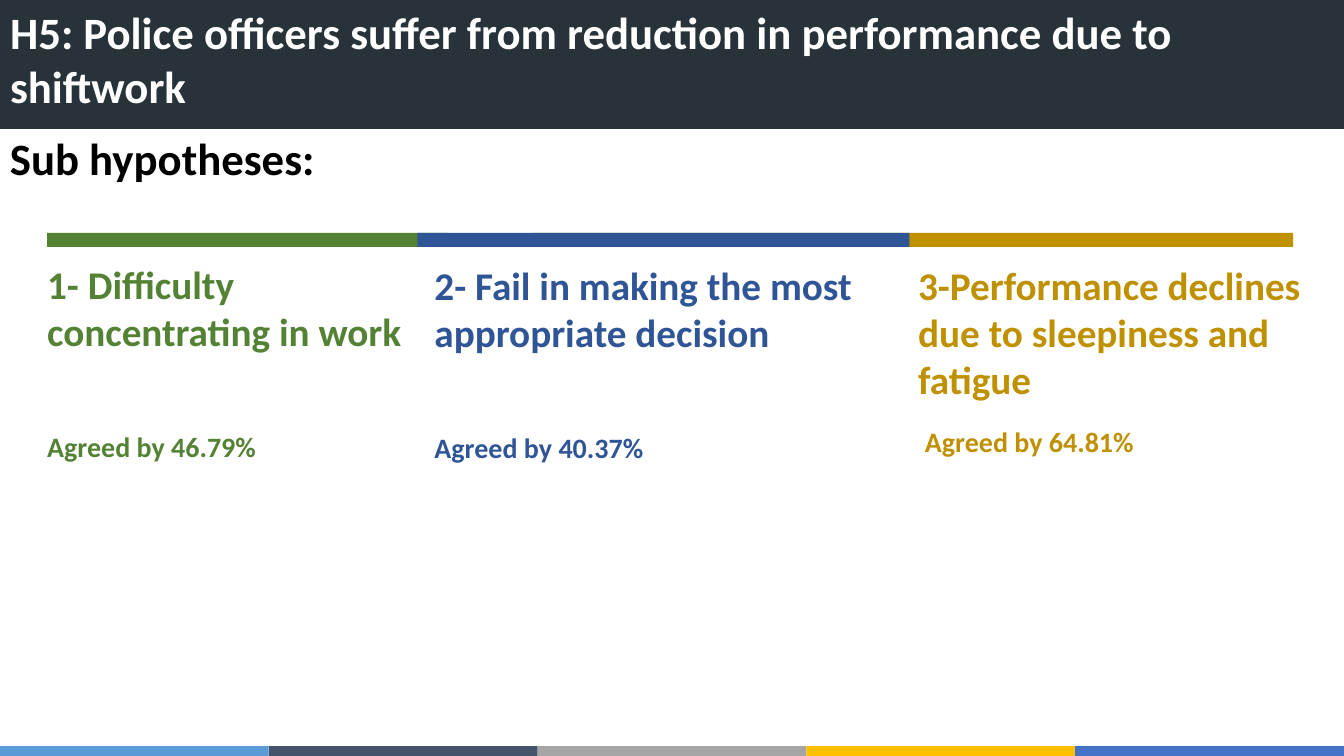
"""Build the slide on hypothesis H5 about shiftwork and performance."""
from pptx import Presentation
from pptx.dml.color import RGBColor
from pptx.enum import shapes, text
from pptx.util import Cm, Pt

TITLE = "H5: Police officers suffer from reduction in performance due to shiftwork"
GREEN, BLUE, GOLD = "548235", "2F5597", "BF9000"
FOOTER_COLOURS = ["5B9BD5", "44546A", "A5A5A5", "FFC000", "4472C4"]
BARS = [(1.19, 10.11, GREEN), (13.39, 19.2, GOLD), (10.52, 12.4, BLUE)]
COLUMNS = [
    (1.19, 6.55, 9.75, GREEN,
     [("1- Difficulty concentrating in work", 28, 0), ("Agreed by 46.79%", 20, 54)]),
    (10.95, 6.58, 11.96, BLUE,
     [("2- Fail in making the most appropriate decision", 28, 0), ("Agreed by 40.37%", 20, 54)]),
    (23.14, 6.58, 10.26, GOLD,
     [("3-Performance declines due to sleepiness and fatigue", 28, 0)]),
]
WIDTH, HEIGHT = 33.87, 19.05
FOOTER_HEIGHT = 0.25


def colour(value):
    return RGBColor.from_string(value)


def add_bar(slide, left, top, width, height, fill):
    bar = slide.shapes.add_shape(
        shapes.MSO_SHAPE.RECTANGLE, Cm(left), Cm(top), Cm(width), Cm(height))
    bar.shadow.inherit = False
    bar.fill.solid()
    bar.fill.fore_color.rgb = colour(fill)
    bar.line.fill.background()


def write(frame, lines, ink):
    frame.auto_size = text.MSO_AUTO_SIZE.NONE
    frame.vertical_anchor = text.MSO_ANCHOR.TOP
    for index, (words, size, gap) in enumerate(lines):
        paragraph = frame.add_paragraph() if index else frame.paragraphs[0]
        paragraph.text = words
        paragraph.alignment = text.PP_ALIGN.LEFT
        paragraph.space_before = Pt(gap)
        paragraph.font.name = "Calibri"
        paragraph.font.size = Pt(size)
        paragraph.font.bold = True
        paragraph.font.color.rgb = colour(ink)


def add_text(slide, left, top, width, height, lines, ink, wrap=True):
    frame = slide.shapes.add_textbox(Cm(left), Cm(top), Cm(width), Cm(height)).text_frame
    frame.word_wrap = wrap
    write(frame, lines, ink)
    return frame


def main():
    presentation = Presentation()
    presentation.slide_width, presentation.slide_height = Cm(WIDTH), Cm(HEIGHT)
    slide = presentation.slides.add_slide(presentation.slide_layouts[5])

    title = slide.shapes.title
    title.left, title.top, title.width, title.height = Cm(0), Cm(0), Cm(WIDTH), Cm(3.25)
    title.fill.solid()
    title.fill.fore_color.rgb = colour("273339")
    write(title.text_frame, [(TITLE, 32, 0)], "FFFFFF")

    step = WIDTH / len(FOOTER_COLOURS)
    for index, fill in enumerate(FOOTER_COLOURS):
        add_bar(slide, index * step, HEIGHT - FOOTER_HEIGHT, step, FOOTER_HEIGHT, fill)
    for left, width, fill in BARS:
        add_bar(slide, left, 5.87, width, 0.35, fill)

    add_text(slide, 0, 3.18, 8.25, 1.63, [("Sub hypotheses:", 32, 0)], "000000", False)
    for left, top, width, ink, lines in COLUMNS:
        frame = add_text(slide, left, top, width, 5.05, lines, ink)
        frame.margin_left = frame.margin_top = frame.margin_bottom = 0
        frame.margin_right = Cm(0.33)
    add_text(slide, 23.06, 10.57, 5.82, 1.12, [("Agreed by 64.81%", 20, 0)], GOLD, False)

    presentation.save("out.pptx")


if __name__ == "__main__":
    main()
